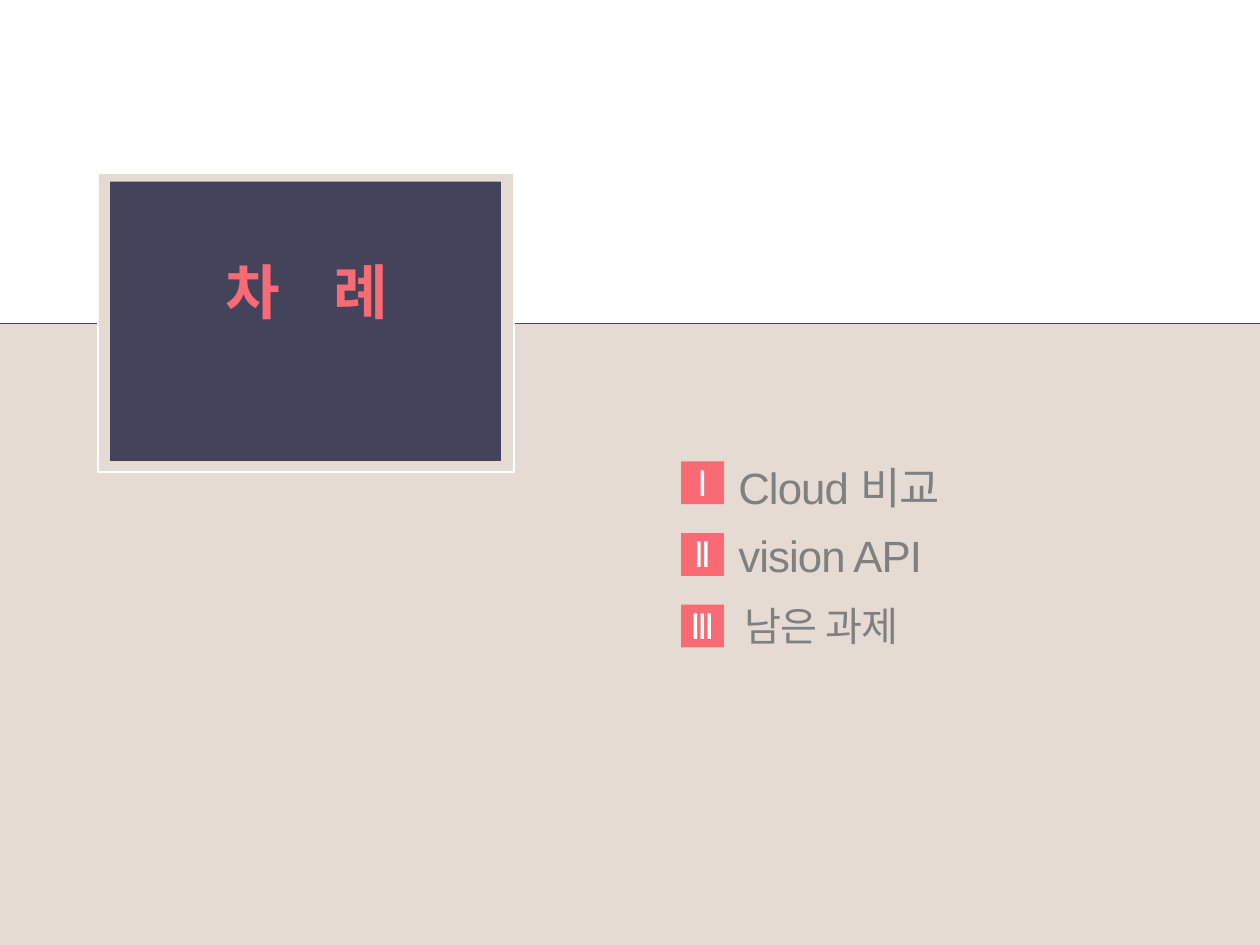
"""Build the contents slide: a framed title over a two-tone page and a numbered list."""
from lxml import etree
from pptx import Presentation
from pptx.dml.color import RGBColor
from pptx.enum.shapes import MSO_CONNECTOR, MSO_SHAPE
from pptx.enum.text import MSO_ANCHOR, MSO_AUTO_SIZE, PP_ALIGN
from pptx.oxml.ns import qn
from pptx.util import Pt

RECT = MSO_SHAPE.RECTANGLE
LINE = MSO_CONNECTOR.STRAIGHT
LEFT, CENTER = PP_ALIGN.LEFT, PP_ALIGN.CENTER
TOP, MIDDLE = MSO_ANCHOR.TOP, MSO_ANCHOR.MIDDLE
FIXED = MSO_AUTO_SIZE.NONE

TITLE = "차    례"
ITEMS = [
    {"mark": "Ⅰ", "text": "Cloud 비교", "size": "item", "indent": 0},
    {"mark": "Ⅱ", "text": "vision API", "size": "item", "indent": 0},
    {"mark": "Ⅲ", "text": "남은 과제", "size": "last", "indent": 3.6},
]

THEME = {
    "font": "Arial",
    "color": {"sand": "E5DBD2", "navy": "43435B", "coral": "F86B74",
              "gray": "808080", "white": "FFFFFF"},
    "size": {"title": 34, "item": 25, "last": 23, "mark": 20},
}

WIDTH, HEIGHT = 720, 540
SPLIT = 185
FRAME = (56.2, 98.6, 237.6, 171)
PANEL = (63, 103.8, 223.2, 159.6)
HEAD = (69.1, 144, 212.4, 43.9)
LIST = (414.7, 254, 283, 122)
LEADING = 39
BADGE = {"left": 389.2, "top": 263.7, "side": 24.5, "pitch": 40.9}
TIGHT = -50


def color(name):
    return RGBColor.from_string(THEME["color"][name])


def place(shape, box):
    shape.left, shape.top, shape.width, shape.height = map(Pt, box)


def block(slide, box, fill, edge=None):
    shape = slide.shapes.add_shape(RECT, *map(Pt, box))
    shape.shadow.inherit = False
    shape.fill.solid()
    shape.fill.fore_color.rgb = color(fill)
    if edge:
        shape.line.color.rgb = color(edge)
        shape.line.width = Pt(1.25)
    else:
        shape.line.fill.background()
    return shape


def setup(frame, anchor, pads, wrap=True):
    frame.auto_size = FIXED
    frame.word_wrap = wrap
    frame.vertical_anchor = anchor
    (frame.margin_left, frame.margin_top,
     frame.margin_right, frame.margin_bottom) = map(Pt, pads)


def write(para, text, size, tint, align, bold=False, track=0):
    para.text = text
    para.alignment = align
    para.space_before = para.space_after = Pt(0)
    font = para.font
    font.name = THEME["font"]
    font.size = Pt(THEME["size"][size])
    font.color.rgb = color(tint)
    font.bold = bold
    for run in para.runs:
        run.font._element.set("spc", str(track))


def backdrop(slide):
    block(slide, (0, SPLIT, WIDTH, HEIGHT - SPLIT), "sand")
    rule = slide.shapes.add_connector(LINE, Pt(0), Pt(SPLIT), Pt(WIDTH), Pt(SPLIT))
    rule.line.color.rgb = color("navy")
    rule.line.width = Pt(0.5)
    etree.SubElement(rule._element.spPr, qn("a:effectLst"))
    block(slide, FRAME, "sand", "white")
    block(slide, PANEL, "navy")


def badges(slide):
    side = BADGE["side"]
    for row, item in enumerate(ITEMS):
        top = BADGE["top"] + row * BADGE["pitch"]
        frame = block(slide, (BADGE["left"], top, side, side), "coral").text_frame
        setup(frame, MIDDLE, (2.9, 2.9, 2.9, 3.6), wrap=False)
        write(frame.paragraphs[0], item["mark"], "mark", "white", CENTER, track=TIGHT)


def heading(title):
    place(title, HEAD)
    setup(title.text_frame, MIDDLE, (7.2, 3.6, 7.2, 3.6))
    write(title.text_frame.paragraphs[0], TITLE, "title", "coral", CENTER, bold=True)


def listing(body):
    place(body, LIST)
    frame = body.text_frame
    setup(frame, TOP, (7.2, 0, 7.2, 0))
    for row, item in enumerate(ITEMS):
        para = frame.add_paragraph() if row else frame.paragraphs[0]
        write(para, item["text"], item["size"], "gray", LEFT, track=TIGHT)
        para.line_spacing = Pt(LEADING)
        props = para._p.get_or_add_pPr()
        props.set("marL", str(Pt(item["indent"])))
        props.set("indent", "0")
        mark = etree.Element(qn("a:buNone"))
        props.find(qn("a:defRPr")).addprevious(mark)


def main():
    deck = Presentation()
    deck.slide_width, deck.slide_height = Pt(WIDTH), Pt(HEIGHT)
    slide = deck.slides.add_slide(deck.slide_layouts[1])
    title, body = slide.placeholders
    backdrop(slide)
    badges(slide)
    heading(title)
    listing(body)
    for shape in (title, body):
        slide.shapes._spTree.append(shape._element)
    deck.save("out.pptx")


if __name__ == "__main__":
    main()
